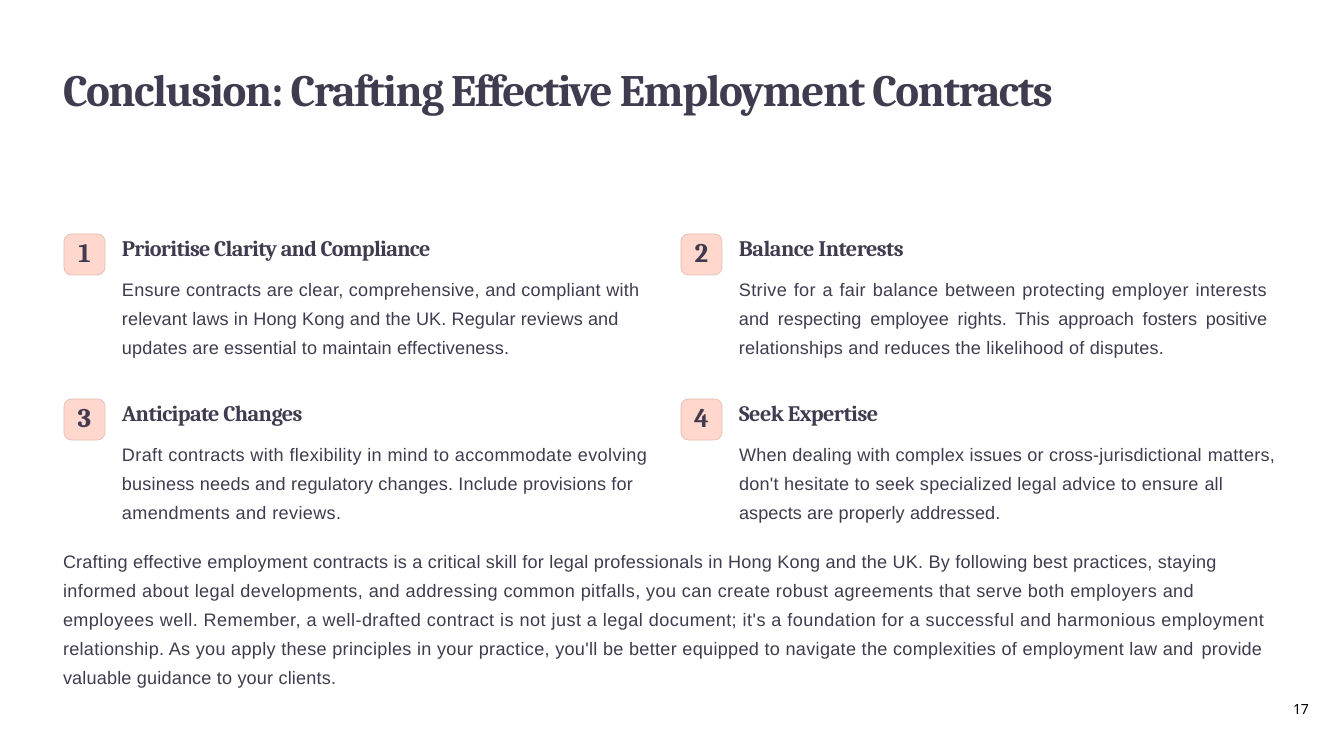
from pptx import Presentation
from pptx.dml.color import RGBColor
from pptx.enum.shapes import MSO_SHAPE as Shape
from pptx.enum.text import MSO_ANCHOR as Anchor, MSO_AUTO_SIZE as AutoSize, PP_ALIGN as Align
from pptx.util import Pt

SCALE = 914400 / 84
COLORS = {"ink": "403B4E", "badge": "FFD7CC", "edge": "E4BDB1", "number": "000000"}
TITLE = {"name": "Cambria", "size": Pt(38.5), "bold": True}
BADGE = {"name": "Cambria", "size": Pt(23), "bold": True}
HEADING = {"name": "Cambria", "size": Pt(19), "bold": True}
BODY = {"name": "Arial", "size": Pt(15.5), "bold": False}
NUMBER = {"name": "Noto Sans", "size": Pt(12), "bold": False}

CARDS = [
    (532, Align.LEFT, ("Prioritise Clarity and Compliance", -57), [
        ("Ensure contracts are clear, comprehensive, and compliant with ", 24),
        ("relevant laws in Hong Kong and the UK. Regular reviews and ", 12),
        ("updates are essential to maintain effectiveness.", 14)]),
    (529, Align.JUSTIFY, ("Balance Interests", -43), [
        ("Strive for a fair balance between protecting employer interests ", 32),
        ("and respecting employee rights. This approach fosters positive ", 2),
        ("relationships and reduces the likelihood of disputes.", 20)]),
    (538, Align.LEFT, ("Anticipate Changes", -47), [
        ("Draft contracts with flexibility in mind to accommodate evolving ", 35),
        ("business needs and regulatory changes. Include provisions for ", 16),
        ("amendments and reviews.", 34)]),
    (541, Align.LEFT, ("Seek Expertise", -39), [
        ("When dealing with complex issues or cross-jurisdictional ", 19),
        ("matters, don't hesitate to seek specialized legal advice to ensure ", 22),
        ("all aspects are properly addressed.", 12)]),
]
CLOSING = [
    ("Crafting effective employment contracts is a critical skill for legal professionals "
     "in Hong Kong and the UK. By following best practices, staying ", 19),
    ("informed about legal developments, and addressing common pitfalls, you can create "
     "robust agreements that serve both employers and ", 36),
    ("employees well. Remember, a well-drafted contract is not just a legal document; "
     "it's a foundation for a successful and harmonious employment ", 39),
    ("relationship. As you apply these principles in your practice, you'll be better "
     "equipped to navigate the complexities of employment law and ", 28),
    ("provide valuable guidance to your clients.", 18),
]


def px(*lengths):
    """Turn pixel lengths into EMU."""
    return [round(length * SCALE) for length in lengths]


def rgb(name):
    """Look up a colour by its role."""
    return RGBColor.from_string(COLORS[name])


def set_frame(frame, anchor=Anchor.TOP, bottom=0):
    """Give a text frame tight margins and wrapping."""
    top, base = px(1, bottom)
    formats = {"margin_left": 0, "margin_right": 0, "margin_top": top, "margin_bottom": base,
               "word_wrap": True, "auto_size": AutoSize.NONE, "vertical_anchor": anchor}
    for name, value in formats.items():
        setattr(frame, name, value)


def write(para, spans, font, color="ink", **formats):
    """Fill a paragraph with spans of text and letter spacing."""
    for name, value in formats.items():
        setattr(para, name, value)
    for text, spacing in spans:
        span = para.add_run()
        span.text = text
        for name, value in font.items():
            setattr(span.font, name, value)
        span.font.color.rgb = rgb(color)
        span.font._element.set("spc", str(spacing))


def add_text(page, box):
    """Add a text box and return its frame."""
    frame = page.shapes.add_textbox(*px(*box)).text_frame
    set_frame(frame)
    return frame


def add_title(page, box):
    """Place the slide title."""
    title = page.shapes.title
    title.left, title.top, title.width, title.height = px(*box)
    set_frame(title.text_frame)
    write(title.text_frame.paragraphs[0],
          [("Conclusion: Crafting Effective Employment Contracts", -119)], TITLE,
          alignment=Align.LEFT, space_before=Pt(1))


def add_card(page, box, number, align, heading, lines):
    """Place a numbered badge with its heading and text."""
    left, top, width, height = box
    badge = page.shapes.add_shape(Shape.ROUNDED_RECTANGLE, *px(left, top, 41, 41))
    badge.adjustments[0] = 0.18
    badge.shadow.inherit = False
    badge.fill.solid()
    badge.fill.fore_color.rgb = rgb("badge")
    badge.line.color.rgb = rgb("edge")
    badge.line.width = Pt(0.6)
    set_frame(badge.text_frame, Anchor.MIDDLE, 6)
    write(badge.text_frame.paragraphs[0], [(str(number), 0)], BADGE, alignment=Align.CENTER)
    frame = add_text(page, (left + 58, top - 1, width, height))
    write(frame.paragraphs[0], [heading], HEADING, alignment=align, space_before=Pt(0.9))
    write(frame.add_paragraph(), lines, BODY, alignment=align,
          line_spacing=1.34, space_before=Pt(8.7))


def add_cards(page, box):
    """Lay the cards out in a grid of two columns."""
    left, top, width, height = box
    for index, (text_width, align, heading, lines) in enumerate(CARDS):
        row, column = divmod(index, 2)
        place = (left + column * width, top + row * height, text_width, 127)
        add_card(page, place, index + 1, align, heading, lines)


def add_closing(page, box):
    """Place the closing paragraph."""
    write(add_text(page, box).paragraphs[0], CLOSING, BODY,
          line_spacing=1.34, space_before=Pt(1.1))


def add_number(page, box):
    """Place the page number."""
    write(add_text(page, box).paragraphs[0], [("17", -20)], NUMBER, "number",
          alignment=Align.RIGHT)


def main():
    """Build the deck."""
    deck = Presentation()
    deck.slide_width, deck.slide_height = px(1344, 756)
    page = deck.slides.add_slide(deck.slide_layouts[5])
    add_title(page, (63, 61, 1170, 56))
    add_cards(page, (64, 234, 617, 165))
    add_closing(page, (63, 542, 1205, 150))
    add_number(page, (1269, 700, 40, 22))
    deck.save("out.pptx")


if __name__ == "__main__":
    main()
